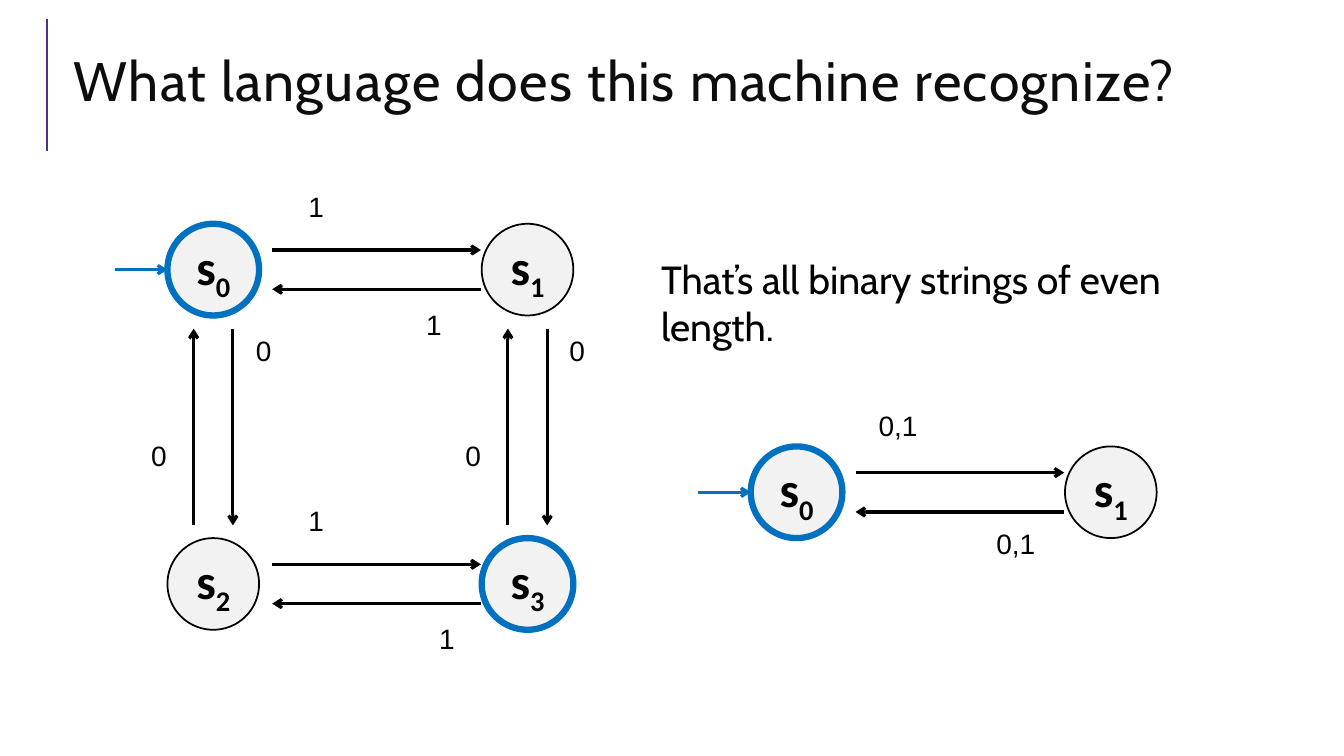
import pptx
import pptx.dml.color
import pptx.enum.shapes
import pptx.enum.text
import pptx.oxml.ns
import pptx.util
from lxml import etree
from pptx.util import Cm

BLACK, BLUE, PURPLE, GREY = "000000", "0070C0", "4C3282", "F2F2F2"
TITLE = "What language does this machine recognize?"
ANSWER = "That’s all binary strings of even length."

# Lengths in centimetres
DIAMETER, STATE_STEP = 2.31, 7.92
LANES = (0.66, 1.65)  # offsets of the two parallel arrows from a state's edge
ARROW_START = 2.64
ACROSS_END, DOWN_END = 7.9, 7.6
ENTRY_LENGTH = 1.32

# States: (number, column, row, accepting)
# Labels: (text, left, top, width, height), measured from the machine's corner
MACHINES = [
    {
        "corner": (4.22, 5.64),
        "states": [(0, 0, 0, True), (2, 0, 1, False), (3, 1, 1, True), (1, 1, 0, False)],
        "across": [(0, 0), (0, 1)],
        "down": [(0, 0), (1, 0)],
        "labels": [
            ("1", 3.3, -0.99, 1, 1.73), ("1", 6.27, 1.98, 1, 1.73),
            ("1", 3.3, 6.93, 1, 1.73), ("1", 6.6, 9.9, 1, 1.73),
            ("0", 1.98, 2.64, 1, 1.73), ("0", -0.66, 5.28, 1, 1.73),
            ("0", 9.88, 2.64, 1, 1.73), ("0", 7.26, 5.28, 1, 1.73),
        ],
    },
    {
        "corner": (18.92, 11.25),
        "states": [(0, 0, 0, True), (1, 1, 0, False)],
        "across": [(0, 0)],
        "down": [],
        "labels": [("0,1", 2.97, -1.07, 2.64, 1.12), ("0,1", 5.94, 1.9, 1.98, 1.12)],
    },
]


def colour(code):
    return pptx.dml.color.RGBColor.from_string(code)


def add_span(para, text, size, font, code=BLACK, bold=False):
    span = para.add_run()
    span.text = text
    span.font.size = pptx.util.Pt(size)
    span.font.name = font
    span.font.bold = bold
    span.font.color.rgb = colour(code)
    return span


def add_text(page, text, left, top, width, height, size, font):
    box = page.shapes.add_textbox(Cm(left), Cm(top), Cm(width), Cm(height))
    box.text_frame.word_wrap = True
    add_span(box.text_frame.paragraphs[0], text, size, font)


def add_line(page, start, end, code=BLACK, width=2.25, arrow=True):
    line = page.shapes.add_connector(
        pptx.enum.shapes.MSO_CONNECTOR.STRAIGHT,
        Cm(start[0]), Cm(start[1]), Cm(end[0]), Cm(end[1]))
    line.line.color.rgb = colour(code)
    line.line.width = pptx.util.Pt(width)
    if arrow:
        outline = line.line._get_or_add_ln()
        etree.SubElement(outline, pptx.oxml.ns.qn("a:tailEnd"), type="arrow")
    etree.SubElement(line._element.spPr, pptx.oxml.ns.qn("a:effectLst"))


def add_state(page, number, left, top, accepting):
    state = page.shapes.add_shape(
        pptx.enum.shapes.MSO_SHAPE.OVAL, Cm(left), Cm(top), Cm(DIAMETER), Cm(DIAMETER))
    state.shadow.inherit = False
    state.fill.solid()
    state.fill.fore_color.rgb = colour(GREY)
    state.line.color.rgb = colour(BLUE if accepting else BLACK)
    state.line.width = pptx.util.Pt(4.5 if accepting else 1.25)
    state.text_frame.vertical_anchor = pptx.enum.text.MSO_ANCHOR.MIDDLE
    para = state.text_frame.paragraphs[0]
    para.alignment = pptx.enum.text.PP_ALIGN.CENTER
    add_span(para, "s", 35, "Calibri", bold=True)
    subscript = add_span(para, str(number), 35, "Calibri", bold=True)
    subscript.font._element.set("baseline", "-25000")


def add_machine(page, machine):
    left, top = machine["corner"]
    for number, column, row, accepting in machine["states"]:
        add_state(page, number, left + column * STATE_STEP, top + row * STATE_STEP, accepting)

    there, back = LANES
    for column, row in machine["across"]:
        x, y = left + column * STATE_STEP, top + row * STATE_STEP
        near, far = x + ARROW_START, x + ACROSS_END
        add_line(page, (near, y + there), (far, y + there))
        add_line(page, (far, y + back), (near, y + back))
    for column, row in machine["down"]:
        x, y = left + column * STATE_STEP, top + row * STATE_STEP
        near, far = y + ARROW_START, y + DOWN_END
        add_line(page, (x + back, near), (x + back, far))
        add_line(page, (x + there, far), (x + there, near))

    middle = top + DIAMETER / 2
    add_line(page, (left - ENTRY_LENGTH, middle), (left, middle), BLUE)
    for text, x, y, width, height in machine["labels"]:
        add_text(page, text, left + x, top + y, width, height, 20, "Arial")


def add_title(page):
    title = page.shapes.title
    title.left, title.top, title.width, title.height = Cm(1.6), Cm(0.74), Cm(31.06), Cm(2.82)
    title.text_frame.vertical_anchor = pptx.enum.text.MSO_ANCHOR.MIDDLE
    para = title.text_frame.paragraphs[0]
    para.alignment = pptx.enum.text.PP_ALIGN.LEFT
    para.line_spacing = 0.8
    span = add_span(para, TITLE, 39.6, "Cabin", "0D0D0D")
    span.font._element.set("spc", "100")


def main():
    deck = pptx.Presentation()
    deck.slide_width, deck.slide_height = Cm(33.87), Cm(19.05)
    page = deck.slides.add_slide(deck.slide_layouts[5])
    add_line(page, (1.19, 3.81), (1.19, 0.48), PURPLE, 1.5, arrow=False)
    add_title(page)
    for machine in MACHINES:
        add_machine(page, machine)
    add_text(page, ANSWER, 16.41, 6.3, 14.91, 2.64, 28, "Cabin")
    deck.save("out.pptx")


if __name__ == "__main__":
    main()
